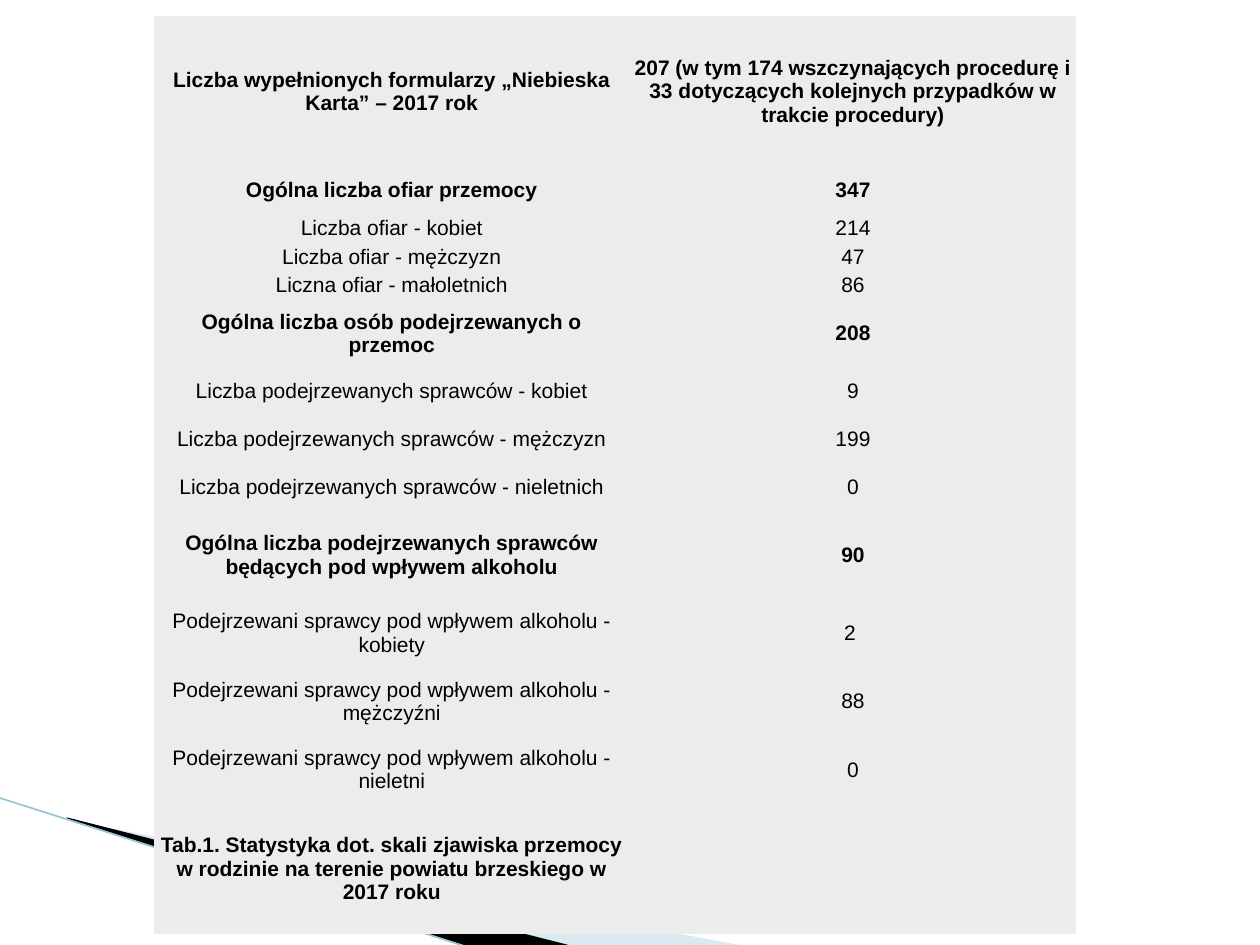
from lxml.etree import SubElement
from pptx import Presentation
from pptx.dml.color import RGBColor
from pptx.enum.shapes import MSO_CONNECTOR
from pptx.enum.text import MSO_ANCHOR, PP_ALIGN
from pptx.oxml.ns import qn
from pptx.util import Pt

BLACK = RGBColor(0x00, 0x00, 0x00)
CELL_GREY = RGBColor(0xEC, 0xEC, 0xEC)
PALE_BLUE = RGBColor(0xA0, 0xCB, 0xDC)
LINE_BLUE = RGBColor(0x97, 0xC5, 0xD8)

PLAIN_TABLE_STYLE = "{2D5ABB26-0587-4C30-8999-92F81FD0307C}"
COLUMN_WIDTHS = (272.2, 254.9)
CELL_INSET = 1.4

# Label, value, row height, bold
STATISTICS = [
    ("Liczba wypełnionych formularzy „Niebieska Karta” – 2017 rok",
     "207 (w tym 174 wszczynających procedurę i 33 dotyczących kolejnych "
     "przypadków w trakcie procedury)", 85.7, True),
    ("Ogólna liczba ofiar przemocy", "347", 27.3, True),
    ("Liczba ofiar - kobiet", "214", 16, False),
    ("Liczba ofiar - mężczyzn", "47", 16, False),
    ("Liczna ofiar - małoletnich", "86", 16, False),
    ("Ogólna liczba osób podejrzewanych o przemoc", "208", 39, True),
    ("Liczba podejrzewanych sprawców - kobiet", "9", 27.3, False),
    ("Liczba podejrzewanych sprawców - mężczyzn", "199", 27.3, False),
    ("Liczba podejrzewanych sprawców - nieletnich", "0", 27.3, False),
    ("Ogólna liczba podejrzewanych sprawców będących pod wpływem alkoholu",
     "90", 50.4, True),
    ("Podejrzewani sprawcy pod wpływem alkoholu - kobiety", "2 ", 39, False),
    ("Podejrzewani sprawcy pod wpływem alkoholu - mężczyźni", "88", 39, False),
    ("Podejrzewani sprawcy pod wpływem alkoholu - nieletni", "0", 39, False),
    ("Tab.1. Statystyka dot. skali zjawiska przemocy w rodzinie na terenie "
     "powiatu brzeskiego w 2017 roku", "", 74.2, True),
]


def write_text(frame, text, *, size=12, bold=False, color=BLACK,
               font="Arial", align=PP_ALIGN.CENTER):
    paragraph = frame.paragraphs[0]
    paragraph.alignment = align
    run = paragraph.add_run()
    run.text = text
    run.font.name = font
    run.font.size = Pt(size)
    run.font.bold = bold
    run.font.color.rgb = color


def add_wedge(slide, points, color, opacity=100):
    builder = slide.shapes.build_freeform(*points[0], scale=Pt(1))
    builder.add_line_segments(points[1:], close=True)
    wedge = builder.convert_to_shape()
    wedge.shadow.inherit = False
    wedge.line.fill.background()
    wedge.fill.solid()
    wedge.fill.fore_color.rgb = color
    if opacity < 100:
        fill_color = wedge.element.spPr.find(f"{qn('a:solidFill')}/{qn('a:srgbClr')}")
        SubElement(fill_color, qn("a:alpha"), val=str(opacity * 1000))


def add_edge_line(slide, start, end, color, width):
    edge = slide.shapes.add_connector(
        MSO_CONNECTOR.STRAIGHT, *(Pt(value) for value in start + end))
    edge.line.color.rgb = color
    edge.line.width = Pt(width)
    SubElement(edge.element.spPr, qn("a:effectLst"))


def fill_cell(cell, text, bold):
    cell.fill.solid()
    cell.fill.fore_color.rgb = CELL_GREY
    cell.vertical_anchor = MSO_ANCHOR.MIDDLE
    cell.margin_left = cell.margin_right = Pt(CELL_INSET)
    cell.margin_top = cell.margin_bottom = Pt(CELL_INSET)
    if text:
        write_text(cell.text_frame, text, bold=bold)


def add_statistics_table(slide, left, top):
    height = sum(row[2] for row in STATISTICS)
    frame = slide.shapes.add_table(
        len(STATISTICS), len(COLUMN_WIDTHS),
        Pt(left), Pt(top), Pt(sum(COLUMN_WIDTHS)), Pt(height))
    next(frame.element.iter(qn("a:tableStyleId"))).text = PLAIN_TABLE_STYLE
    table = frame.table
    table.first_row = table.horz_banding = False
    for column, width in zip(table.columns, COLUMN_WIDTHS):
        column.width = Pt(width)
    for row, (label, value, row_height, bold) in zip(table.rows, STATISTICS):
        row.height = Pt(row_height)
        for cell, text in zip(row.cells, (label, value)):
            fill_cell(cell, text, bold)


def main():
    presentation = Presentation()
    presentation.slide_width, presentation.slide_height = Pt(720), Pt(540)
    slide = presentation.slides.add_slide(presentation.slide_layouts[6])

    # Decorative wedges in the lower left corner
    add_wedge(slide, [(39.6, 468.7), (428.4, 540.7), (328.3, 540.7), (39.6, 468)],
              PALE_BLUE, opacity=40)
    add_wedge(slide, [(38.2, 467.3), (329, 540.7), (267.8, 541.4), (38.9, 468)],
              BLACK)
    add_edge_line(slide, (-0.7, 455.8), (267.8, 541.4), LINE_BLUE, 0.95)

    # Statistics with the caption in the last row
    add_statistics_table(slide, 87.8, 9.4)

    presentation.save("out.pptx")


if __name__ == "__main__":
    main()
